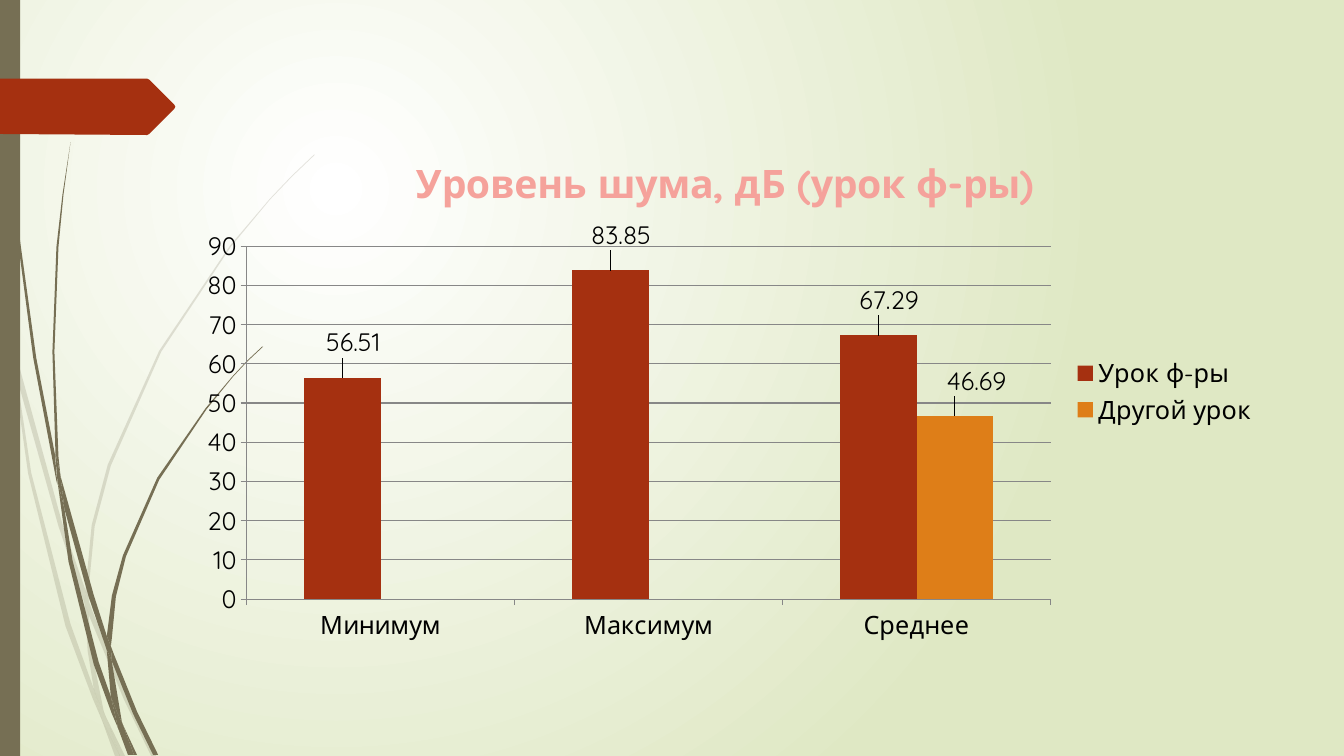
from lxml.etree import SubElement
from pptx import Presentation
from pptx.chart.data import CategoryChartData
from pptx.dml.color import RGBColor
from pptx.enum.chart import XL_CHART_TYPE, XL_LABEL_POSITION, XL_LEGEND_POSITION, XL_TICK_MARK
from pptx.enum.shapes import MSO_SHAPE
from pptx.oxml.ns import qn
from pptx.util import Cm, Pt

WHITE = RGBColor(0xFF, 0xFF, 0xFF)
PALE_GREEN = RGBColor(0xDF, 0xE8, 0xC4)
OLIVE = RGBColor(0x76, 0x6F, 0x54)
RUST = RGBColor(0xA5, 0x30, 0x10)
ORANGE = RGBColor(0xDE, 0x7E, 0x18)
PINK = RGBColor(0xF5, 0xA2, 0x9B)
GRAY = RGBColor(0x87, 0x87, 0x87)
BLACK = RGBColor(0, 0, 0)

PALE_GRASS = [
    [(0.11, 3.5), (0.09, 3.22), (0, 2.82), (0, 2.99), (0.1, 3.44)],
    [(0.58, 5.22), (0.84, 5.99), (0.85, 5.86), (0.62, 5.2), (0.14, 3.45), (0.17, 3.76)],
    [(0.92, 6.07), (0.88, 5.96), (0.88, 6.1), (1.23, 6.94), (1.5, 7.5), (1.55, 7.5), (1.27, 6.92)],
    [(1.19, 7.5), (1.24, 7.5), (1.05, 7.11)],
    [(0.93, 6.83), (0.7, 6.19), (0.31, 4.69), (0.17, 3.76), (0.11, 3.5), (0.28, 4.7),
     (0.65, 6.21), (0.92, 6.93), (1.01, 7.14), (0.99, 7.07)],
    [(0.84, 5.99), (0.87, 6.46), (0.93, 6.83), (0.96, 6.92), (1.05, 7.11), (1.03, 7.06),
     (0.91, 6.46), (0.88, 6.1), (0.88, 6.08)],
    [(0.88, 5.84), (0.94, 5.22), (1.1, 4.62), (1.6, 3.49), (2.29, 2.45), (2.68, 1.98), (2.9, 1.75),
     (3.12, 1.54), (3.12, 1.53), (2.89, 1.75), (2.68, 1.97), (2.28, 2.44), (1.58, 3.48),
     (1.07, 4.61), (0.91, 5.21), (0.85, 5.84), (0.85, 5.86), (0.88, 5.96)],
    [(1.01, 7.14), (1.14, 7.5), (1.19, 7.5)],
    [(0.88, 6.08), (0.88, 6.1), (0.88, 5.96), (0.85, 5.86), (0.84, 5.99)],
    [(0.96, 6.92), (0.93, 6.83), (0.99, 7.07), (1.01, 7.14), (1.19, 7.5), (1.05, 7.11)],
]
DARK_GRASS = [
    [(0.07, 1.1), (0.17, 2.33), (0.33, 3.55), (0.56, 4.77), (0.57, 4.81), (0.55, 4.57), (0.55, 4.53),
     (0.36, 3.55), (0.19, 2.32), (0.08, 1.09), (0.05, 0.48), (0.04, 0), (0.03, 0), (0.04, 0.48)],
    [(0.88, 5.92), (1.06, 6.45), (1.06, 6.31), (0.93, 5.9), (0.6, 4.72), (0.64, 5.05)],
    [(1.13, 6.49), (1.1, 6.41), (1.11, 6.56), (1.32, 7.08), (1.52, 7.49), (1.57, 7.49), (1.36, 7.06)],
    [(1.1, 6.91), (0.98, 6.57), (0.72, 5.56), (0.64, 5.05), (0.57, 4.77), (0.68, 5.57),
     (0.93, 6.59), (1.11, 7.08), (1.17, 7.22), (1.16, 7.17)],
    [(0.6, 4.72), (0.58, 4.53), (0.54, 3.49), (0.58, 2.45), (0.63, 1.93), (0.7, 1.41),
     (0.62, 1.93), (0.56, 2.45), (0.52, 3.49), (0.55, 4.49)],
    [(1.33, 7.49), (1.36, 7.49), (1.22, 7.19)],
    [(0.57, 4.77), (0.64, 5.05), (0.6, 4.72), (0.55, 4.49), (0.55, 4.53)],
    [(1.11, 6.33), (1.15, 5.92), (1.25, 5.52), (1.58, 4.76), (2.05, 4.06), (2.31, 3.74), (2.45, 3.59),
     (2.61, 3.44), (2.6, 3.44), (2.45, 3.58), (2.31, 3.73), (2.04, 4.05), (1.56, 4.74),
     (1.22, 5.51), (1.11, 5.91), (1.06, 6.31), (1.1, 6.41)],
    [(1.17, 7.22), (1.27, 7.49), (1.31, 7.49)],
    [(1.06, 6.45), (1.1, 6.91), (1.16, 7.06), (1.22, 7.19), (1.21, 7.16), (1.11, 6.56), (1.09, 6.51)],
    [(1.06, 6.45), (1.09, 6.51), (1.11, 6.56), (1.1, 6.41), (1.06, 6.31)],
    [(1.16, 7.06), (1.1, 6.91), (1.16, 7.17), (1.17, 7.22), (1.3, 7.49), (1.33, 7.49), (1.22, 7.19)],
]
RIBBON = [(0, 0.78), (1.46, 0.78), (1.48, 0.79), (1.73, 1.04), (1.74, 1.06),
          (1.73, 1.08), (1.48, 1.33), (1.46, 1.34), (0, 1.33)]
LABEL_SHIFTS = [(0, 0, 0.01), (0, 1, 0.01), (0, 2, 0.01), (1, 2, 0.02)]


def inch(value):
    return Cm(value * 2.54)


class SlideBuilder:
    def __init__(self, slide, font, size):
        self.slide, self.font, self.size = slide, font, size

    def background(self, center, edge):
        fill = self.slide.background.fill
        fill.gradient()
        for stop, color in zip(fill.gradient_stops, (center, edge)):
            stop.color.rgb = color
        gradient = self.slide.element.find(".//" + qn("a:gradFill"))
        gradient.remove(gradient.find(qn("a:lin")))
        circle = SubElement(gradient, qn("a:path"), {"path": "circle"})
        SubElement(circle, qn("a:fillToRect"), {"l": "25000", "t": "25000", "r": "75000", "b": "75000"})

    def paint(self, shape, color, alpha=None):
        shape.fill.solid()
        shape.fill.fore_color.rgb = color
        shape.line.fill.background()
        shape.shadow.inherit = False
        if alpha:
            SubElement(shape.element.find(".//" + qn("a:srgbClr")), qn("a:alpha"), val=str(alpha * 1000))

    def outline(self, points, color, alpha=None):
        start, *rest = [(inch(x), inch(y)) for x, y in points]
        freeform = self.slide.shapes.build_freeform(*start)
        freeform.add_line_segments(rest, close=True)
        self.paint(freeform.convert_to_shape(), color, alpha)

    def bar(self, left, top, width, height, color):
        box = [inch(value) for value in (left, top, width, height)]
        self.paint(self.slide.shapes.add_shape(MSO_SHAPE.RECTANGLE, *box), color)

    def style(self, font, color=BLACK, size=None, bold=False):
        font.name, font.size, font.bold = self.font, Pt(size or self.size), bold
        font.color.rgb = color

    def layout(self, parent, position, **values):
        layout = parent.find(qn("c:layout"))
        if layout is None:
            layout = SubElement(parent, qn("c:layout"))
        parent.insert(position, layout)
        manual = SubElement(layout, qn("c:manualLayout"))
        for tag, value in values.items():
            SubElement(manual, qn("c:" + tag), val=str(value))

    def column_chart(self, box, title, categories, series, colors, shifts):
        data = CategoryChartData()
        data.categories = categories
        for name, values in series:
            data.add_series(name, values)
        chart = self.slide.shapes.add_chart(
            XL_CHART_TYPE.COLUMN_CLUSTERED, *[inch(value) for value in box], data).chart
        self.style(chart.font)
        chart.has_title = True
        chart.chart_title.text_frame.text = title
        self.style(chart.chart_title.text_frame.paragraphs[0].runs[0].font, PINK, 28, True)
        chart.chart_title.include_in_layout = False
        chart.has_legend = True
        chart.legend.position = XL_LEGEND_POSITION.RIGHT
        chart.legend.include_in_layout = False
        for axis in (chart.category_axis, chart.value_axis):
            axis.major_tick_mark = XL_TICK_MARK.OUTSIDE
            axis.format.line.color.rgb = GRAY
        chart.value_axis.minimum_scale, chart.value_axis.maximum_scale = 0, 90
        chart.value_axis.major_unit = 10
        chart.value_axis.major_gridlines.format.line.color.rgb = GRAY
        plot = chart.plots[0]
        plot.gap_width, plot.overlap, plot.vary_by_categories = 150, 0, False
        for columns, color in zip(plot.series, colors):
            columns.format.fill.solid()
            columns.format.fill.fore_color.rgb = color
            columns.data_labels.show_value = True
            columns.data_labels.position = XL_LABEL_POSITION.OUTSIDE_END
        for row, point, _ in shifts:
            label = plot.series[row].points[point].data_label
            self.style(label.font)
            label.position = XL_LABEL_POSITION.OUTSIDE_END
        for (_, _, shift), label in zip(shifts, chart.element.iter(qn("c:dLbl"))):
            self.layout(label, 1, x=shift, y=-0.03)
        self.layout(chart.element.find(".//" + qn("c:plotArea")), 0, layoutTarget="inner",
                    xMode="edge", yMode="edge", x=0.06, y=0.22, w=0.74, h=0.68)


def main():
    presentation = Presentation()
    presentation.slide_width, presentation.slide_height = Cm(33.87), Cm(19.05)
    builder = SlideBuilder(presentation.slides.add_slide(presentation.slide_layouts[6]), "Quicksand", 18)
    builder.background(WHITE, PALE_GREEN)
    for grass, alpha in ((PALE_GRASS, 20), (DARK_GRASS, None)):
        for blade in grass:
            builder.outline(blade, OLIVE, alpha)
    builder.bar(0, 0, 0.2, 7.5, OLIVE)
    builder.outline(RIBBON, RUST)
    builder.column_chart(
        (1.8, 1.31, 10.78, 5.15), "Уровень шума, дБ (урок ф-ры)", ["Минимум", "Максимум", "Среднее"],
        [("Урок ф-ры", (56.51, 83.85, 67.29)), ("Другой урок", (None, None, 46.69))],
        (RUST, ORANGE), LABEL_SHIFTS)
    presentation.save("out.pptx")


if __name__ == "__main__":
    main()
